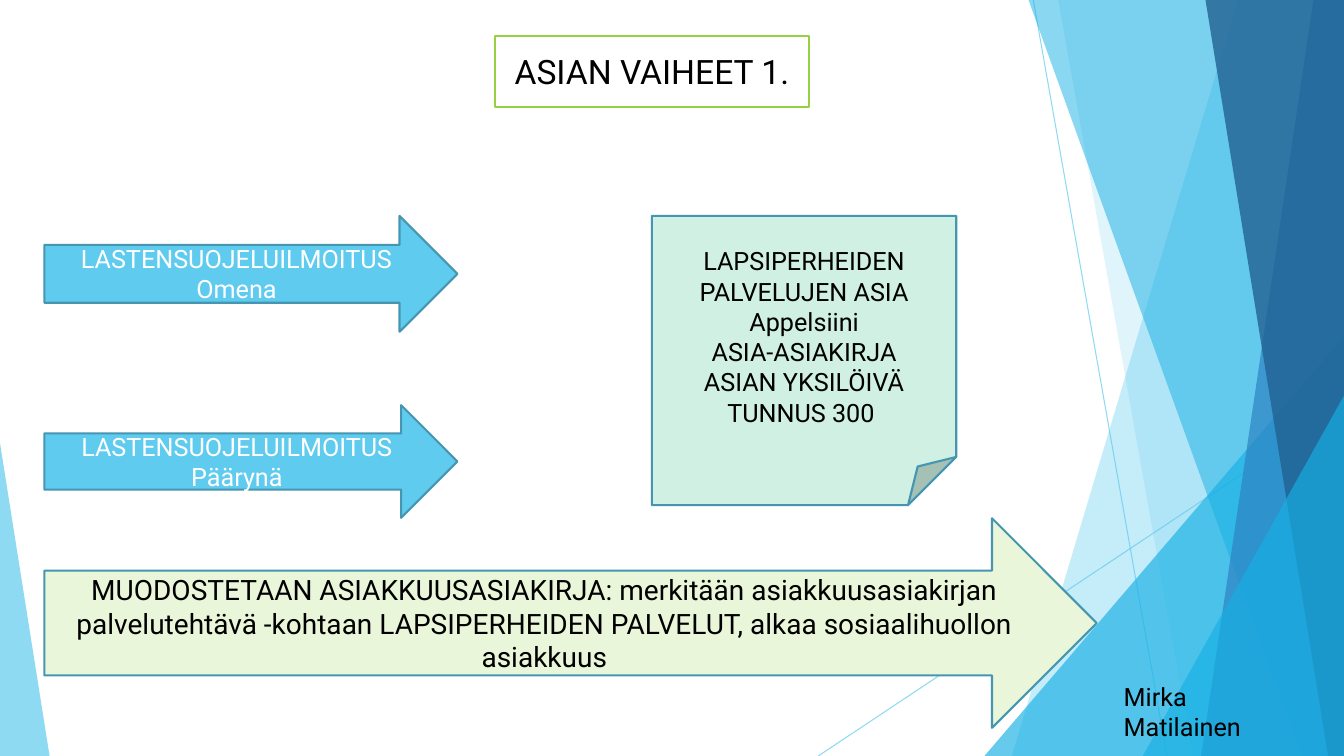
from lxml.etree import SubElement
from pptx import Presentation
from pptx.dml.color import RGBColor
from pptx.enum.shapes import MSO_CONNECTOR as Link, MSO_SHAPE as Form
from pptx.enum.text import MSO_ANCHOR as Anchor, MSO_AUTO_SIZE as Fit, PP_ALIGN as Align
from pptx.oxml.ns import qn
from pptx.util import Cm, Pt

BLACK = RGBColor(0x00, 0x00, 0x00)
WHITE = RGBColor(0xFF, 0xFF, 0xFF)
SKY = RGBColor(0x5F, 0xCB, 0xEF)
AZURE = RGBColor(0x17, 0xB0, 0xE4)
BLUE = RGBColor(0x2E, 0x83, 0xC3)
NAVY = RGBColor(0x22, 0x62, 0x92)
TEAL = RGBColor(0x46, 0x96, 0xB1)
GREEN = RGBColor(0x96, 0xD1, 0x41)
MINT = RGBColor(0xCF, 0xF0, 0xE3)
LIME = RGBColor(0xEA, 0xF6, 0xD9)
WIDE, HIGH = 33.87, 19.05


def paint(shape, color, edge=None, alpha=100):
    shape.shadow.inherit = False
    shape.fill.solid()
    shape.fill.fore_color.rgb = color
    if edge is None:
        shape.line.fill.background()
    else:
        shape.line.color.rgb = edge
        shape.line.width = Pt(1.5)
    if alpha < 100:
        tone = shape.element.spPr.find(".//" + qn("a:srgbClr"))
        SubElement(tone, qn("a:alpha"), val=str(alpha * 1000))


def write(shape, lines, size, color, align=Align.CENTER, anchor=Anchor.MIDDLE):
    frame = shape.text_frame
    frame.word_wrap = True
    frame.auto_size = Fit.NONE
    frame.vertical_anchor = anchor
    for i, line in enumerate(lines):
        para = frame.add_paragraph() if i else frame.paragraphs[0]
        para.alignment = align
        run = para.add_run()
        run.text = line
        run.font.name = "Roboto"
        run.font.size = Pt(size)
        run.font.color.rgb = color


deck = Presentation()
deck.slide_width, deck.slide_height = Cm(WIDE), Cm(HIGH)
slide = deck.slides.add_slide(deck.slide_layouts[5])
shapes = slide.shapes

for x1, y1, x2 in [(26.04, 0, 29.41), (WIDE, 10.24, 20.62)]:
    ray = shapes.add_connector(Link.STRAIGHT, Cm(x1), Cm(y1), Cm(x2), Cm(HIGH))
    ray.line.color.rgb = SKY
    ray.line.width = Pt(0.75)
    tone = ray.element.spPr.find(".//" + qn("a:srgbClr"))
    SubElement(tone, qn("a:alpha"), val="70000")
    SubElement(ray.element.spPr, qn("a:effectLst"))

facets = [
    ("band", 31.2, 25.5, SKY, 36),
    ("band", 26.67, 30.06, SKY, 20),
    ("peak", 24.81, 8.47, AZURE, 66),
    ("band", 25.92, 32.8, AZURE, 50),
    ("band", 33.1, 30.27, BLUE, 70),
    ("band", 30.38, 33.47, NAVY, 80),
    ("peak", 28.8, 9.97, AZURE, 66),
    ("peak", 0, 11.16, SKY, 70),
]
for kind, a, b, color, alpha in facets:
    if kind == "band":
        pen = shapes.build_freeform(Cm(a), Cm(0))
        pen.add_line_segments([(Cm(WIDE), Cm(0)), (Cm(WIDE), Cm(HIGH)), (Cm(b), Cm(HIGH))])
        facet = pen.convert_to_shape()
    else:
        width = WIDE - a if a else 1.25
        facet = shapes.add_shape(Form.ISOSCELES_TRIANGLE, Cm(a), Cm(b), Cm(width), Cm(HIGH - b))
        facet.adjustments[0] = 1 if a else 0
    paint(facet, color, alpha=alpha)

title = shapes.title
title.left, title.top, title.width, title.height = Cm(12.47), Cm(0.91), Cm(7.92), Cm(1.78)
paint(title, WHITE, GREEN)
write(title, ["ASIAN VAIHEET 1."], 24, BLACK)

steps = [
    (Form.RIGHT_ARROW, 1.12, 5.44, 10.41, 2.92, SKY, WHITE, 18,
     ["LASTENSUOJELUILMOITUS Omena"]),
    (Form.RIGHT_ARROW, 1.12, 10.21, 10.41, 2.84, SKY, WHITE, 18,
     ["LASTENSUOJELUILMOITUS Päärynä"]),
    (Form.FOLDED_CORNER, 16.43, 5.44, 7.67, 7.29, MINT, BLACK, 18,
     ["LAPSIPERHEIDEN PALVELUJEN ASIA Appelsiini", "ASIA-ASIAKIRJA",
      "ASIAN YKSILÖIVÄ TUNNUS 300 "]),
    (Form.RIGHT_ARROW, 1.12, 13.06, 26.52, 5.28, LIME, BLACK, 20,
     ["MUODOSTETAAN ASIAKKUUSASIAKIRJA: merkitään asiakkuusasiakirjan palvelutehtävä "
      "-kohtaan LAPSIPERHEIDEN PALVELUT, alkaa sosiaalihuollon asiakkuus"]),
]
for form, x, y, w, h, color, ink, size, lines in steps:
    step = shapes.add_shape(form, Cm(x), Cm(y), Cm(w), Cm(h))
    paint(step, color, TEAL)
    write(step, lines, size, ink)

name = shapes.add_textbox(Cm(28.07), Cm(17.04), Cm(5.13), Cm(2))
write(name, ["Mirka Matilainen"], 18, BLACK, Align.LEFT, Anchor.TOP)

deck.save("out.pptx")
